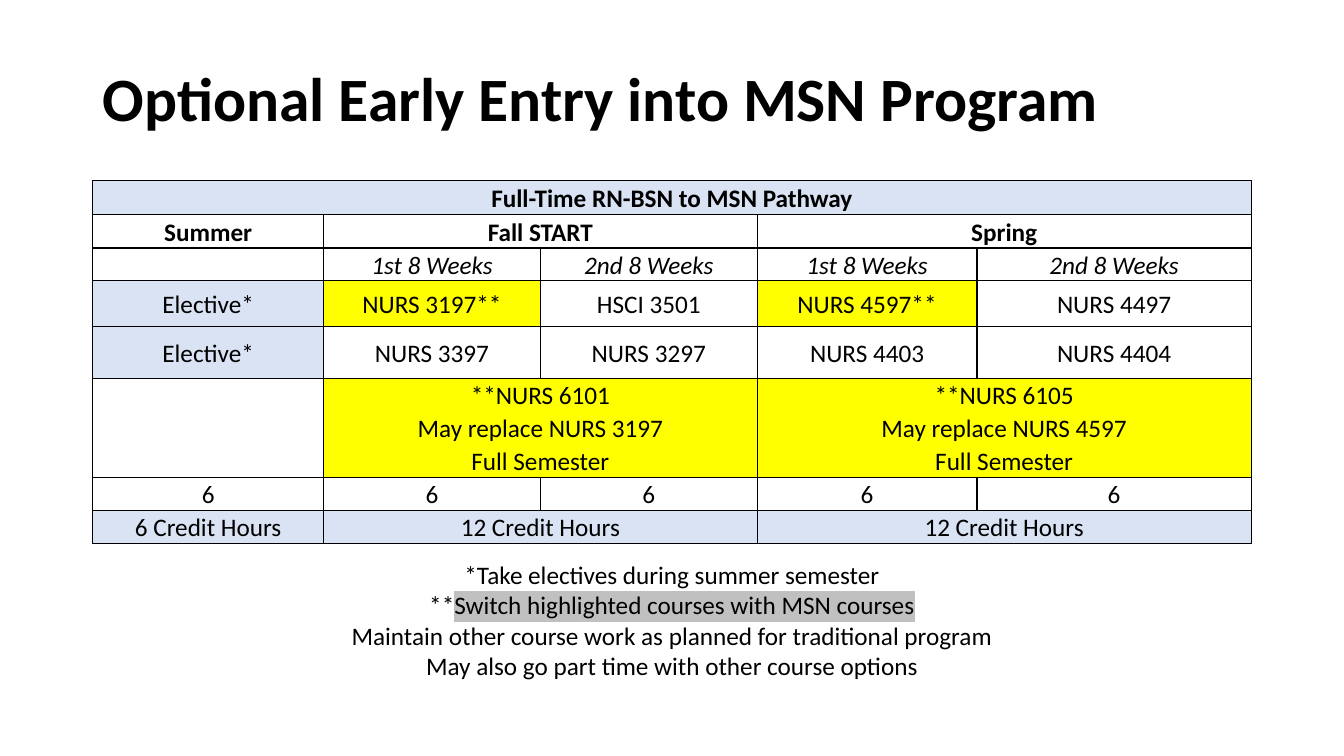
from lxml.etree import SubElement
from pptx import Presentation
from pptx.dml.color import RGBColor
from pptx.enum.text import MSO_ANCHOR as Anchor, MSO_AUTO_SIZE as AutoSize, PP_ALIGN as Align
from pptx.oxml import parse_xml
from pptx.oxml.ns import nsdecls, qn
from pptx.util import Inches, Pt

FONT = "Calibri"
BLACK, PALE_BLUE, YELLOW, GRAY = "000000", "DAE3F3", "FFFF00", "C0C0C0"

COLUMN_WIDTHS = [2.29, 2.15, 2.15, 2.18, 2.72]
ROW_HEIGHTS = [0.34, 0.33, 0.32, 0.45, 0.52, 0.97, 0.32, 0.33]
# None continues the merged cell to its left
PATHWAY = [
    ["Full-Time RN-BSN to MSN Pathway", None, None, None, None],
    ["Summer", "Fall START", None, "Spring", None],
    ["", "1st 8 Weeks", "2nd 8 Weeks", "1st 8 Weeks", "2nd 8 Weeks"],
    ["Elective*", "NURS 3197**", "HSCI 3501", "NURS 4597**", "NURS 4497"],
    ["Elective*", "NURS 3397", "NURS 3297", "NURS 4403", "NURS 4404"],
    ["", "**NURS 6101\nMay replace NURS 3197\nFull Semester", None,
     "**NURS 6105\nMay replace NURS 4597\nFull Semester", None],
    ["6", "6", "6", "6", "6"],
    ["6 Credit Hours", "12 Credit Hours", None, "12 Credit Hours", None],
]
BOLD_ROWS, ITALIC_ROWS, BLUE_ROWS = (0, 1), (2,), (0, 7)

# Each note is a list of (text, highlight) runs
NOTES = [
    [("*Take electives during summer semester", None)],
    [("**", None), ("Switch highlighted courses with MSN courses", GRAY)],
    [("Maintain other course work as planned for traditional program", None)],
    [("May also go part time with other course options", None)],
]


def color(value):
    return RGBColor.from_string(value)


def add_run(paragraph, text, size=18, bold=False, italic=False, highlight=None):
    run = paragraph.add_run()
    run.text = text
    font = run.font
    font.name, font.size, font.bold, font.italic = FONT, Pt(size), bold, italic
    font.color.rgb = color(BLACK)
    if highlight:
        mark = parse_xml(f'<a:highlight {nsdecls("a")}><a:srgbClr val="{highlight}"/></a:highlight>')
        run.font._element.find(qn("a:latin")).addprevious(mark)


def next_paragraph(frame, index):
    return frame.paragraphs[0] if index == 0 else frame.add_paragraph()


def place(shape, box):
    shape.left, shape.top, shape.width, shape.height = (Inches(length) for length in box)


def add_title(slide, box):
    title = slide.shapes.title
    place(title, box)
    frame = title.text_frame
    frame.auto_size = AutoSize.NONE
    frame.vertical_anchor = Anchor.MIDDLE
    paragraph = frame.paragraphs[0]
    paragraph.alignment = Align.LEFT
    paragraph.line_spacing = 0.9
    add_run(paragraph, "Optional Early Entry into MSN Program", size=44, bold=True)


def add_borders(cell):
    properties = cell._tc.get_or_add_tcPr()
    for index, side in enumerate(("lnL", "lnR", "lnT", "lnB")):
        line = parse_xml(f'<a:{side} {nsdecls("a")} w="{Pt(1)}"/>')
        fill = SubElement(line, qn("a:solidFill"))
        SubElement(fill, qn("a:srgbClr"), val=BLACK)
        properties.insert(index, line)


def cell_fill(row, column, text):
    if "NURS" in text and "**" in text:
        return YELLOW
    if row in BLUE_ROWS or text == "Elective*":
        return PALE_BLUE
    return None


def format_cell(cell, row, column, text):
    cell.margin_left = cell.margin_right = Inches(0.07)
    cell.margin_top = cell.margin_bottom = 0
    cell.vertical_anchor = Anchor.MIDDLE
    fill = cell_fill(row, column, text)
    if fill:
        cell.fill.solid()
        cell.fill.fore_color.rgb = color(fill)
    else:
        cell.fill.background()
    add_borders(cell)
    for index, line in enumerate(text.split("\n")):
        paragraph = next_paragraph(cell.text_frame, index)
        paragraph.alignment = Align.CENTER
        paragraph.line_spacing = 1.07
        if line:
            add_run(paragraph, line, bold=row in BOLD_ROWS, italic=row in ITALIC_ROWS)


def add_pathway_table(slide, box):
    frame = slide.shapes.add_table(len(PATHWAY), len(COLUMN_WIDTHS),
                                   *(Inches(length) for length in box))
    table = frame.table
    table.first_row = table.horz_banding = False
    for column, width in zip(table.columns, COLUMN_WIDTHS):
        column.width = Inches(width)
    for row, height in zip(table.rows, ROW_HEIGHTS):
        row.height = Inches(height)

    for row, texts in enumerate(PATHWAY):
        for column, text in enumerate(texts):
            format_cell(table.cell(row, column), row, column, text or "")
        # Merge each text with the None entries after it
        starts = [column for column, text in enumerate(texts) if text is not None]
        for start, end in zip(starts, starts[1:] + [len(texts)]):
            if end - start > 1:
                table.cell(row, start).merge(table.cell(row, end - 1))


def add_notes_text(slide, box):
    frame = slide.shapes.add_textbox(*(Inches(length) for length in box)).text_frame
    frame.word_wrap = True
    for index, runs in enumerate(NOTES):
        paragraph = next_paragraph(frame, index)
        paragraph.alignment = Align.CENTER
        for text, highlight in runs:
            add_run(paragraph, text, highlight=highlight)


def main():
    presentation = Presentation()
    presentation.slide_width, presentation.slide_height = Inches(13.33), Inches(7.5)
    slide = presentation.slides.add_slide(presentation.slide_layouts[5])
    add_title(slide, (0.92, 0.4, 11.5, 1.21))
    add_pathway_table(slide, (0.92, 1.79, sum(COLUMN_WIDTHS), sum(ROW_HEIGHTS)))
    add_notes_text(slide, (3.18, 5.5, 6.97, 1.31))
    presentation.save("out.pptx")


if __name__ == "__main__":
    main()
